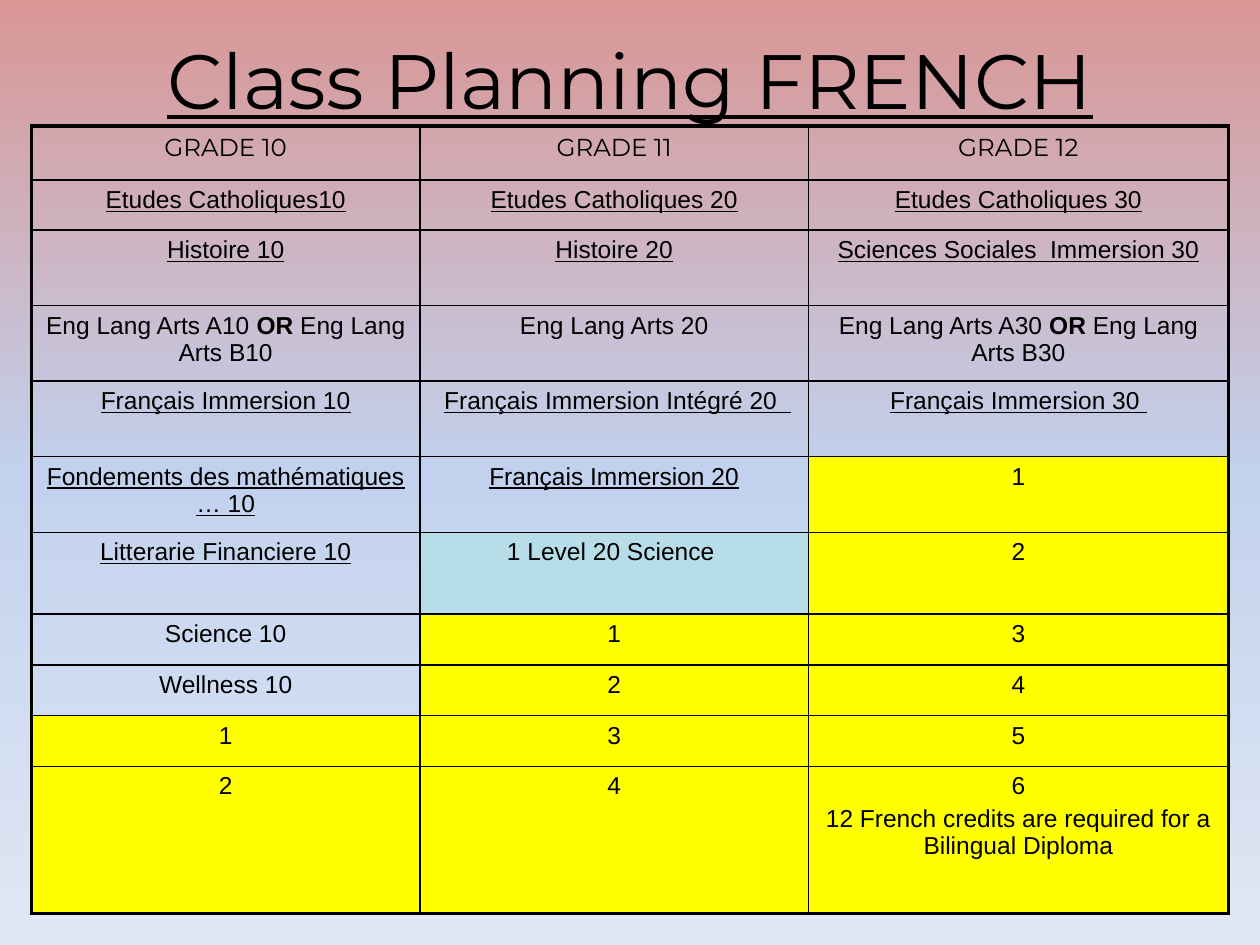
from copy import deepcopy

from lxml import etree
from pptx import Presentation
from pptx import util as u
from pptx.dml import color
from pptx.enum import text
from pptx.oxml import ns

Pt = u.Pt
BLACK, GOLD, BLUE = "000000", "FFFF00", "B7DEE8"
WIDTHS = [222, 222, 240]
HEIGHTS = [31, 28.4] + [43.2] * 4 + [46.8] + [29] * 3 + [84]
ROWS = [
    ["GRADE 10", "GRADE 11", "GRADE 12"],
    ["_Etudes Catholiques10", "_Etudes Catholiques 20", "_Etudes Catholiques 30"],
    ["_Histoire 10", "_Histoire 20", "_Sciences Sociales  Immersion 30"],
    ["Eng Lang Arts A10 *OR* Eng Lang Arts B10", "Eng Lang Arts 20",
     "Eng Lang Arts A30 *OR* Eng Lang Arts B30"],
    ["_Français Immersion 10", " _Français Immersion Intégré 20  ",
     "_Français Immersion 30 "],
    ["_Fondements des mathématiques … 10", "_Français Immersion 20", "1"],
    ["_Litterarie Financiere 10", "1 Level 20 Science ", "2"],
    ["Science 10", "1", "3"],
    ["Wellness 10", "2", "4"],
    ["1", "3", "5"],
    ["2", "4", "6\n12 French credits are required for a Bilingual Diploma"],
]


def rgb(code):
    return color.RGBColor.from_string(code)


class Deck:
    head, body = "Montserrat", "Arial"

    def __init__(self, show):
        self.slide = show.slides.add_slide(show.slide_layouts[5])

    def back(self, stops):
        fill = self.slide.background.fill
        fill.gradient()
        fill.gradient_angle = 270
        first = next(self.slide.element.iter(ns.qn("a:gs")))
        first.addnext(deepcopy(first))
        for stop, (place, code) in zip(fill.gradient_stops, stops):
            stop.color.rgb = rgb(code)
            stop.position = place

    def style(self, para, name, size):
        para.alignment = text.PP_ALIGN.CENTER
        para.font.name = name
        para.font.size = Pt(size)
        para.font.color.rgb = rgb(BLACK)

    def title(self, words, x, y, w, h):
        box = self.slide.shapes.title
        box.left, box.top, box.width, box.height = map(Pt, (x, y, w, h))
        frame = box.text_frame
        frame.text = words
        frame.vertical_anchor = text.MSO_ANCHOR.MIDDLE
        self.style(frame.paragraphs[0], self.head, 44)
        frame.paragraphs[0].font.underline = True

    def line(self, para, words, name):
        self.style(para, name, 14)
        para.space_before = Pt(0 if words.find("_") > 0 else 2.8)
        for i, part in enumerate(words.split("_")):
            for j, bit in enumerate(part.split("*")):
                if bit:
                    run = para.add_run()
                    run.text = bit
                    run.font.underline = i == 1
                    run.font.bold = j == 1

    def edge(self, cell, outer):
        props = cell._tc.get_or_add_tcPr()
        for side, thick in outer.items():
            rule = etree.SubElement(props, ns.qn("a:ln" + side),
                                    w=str(Pt(2.25 if thick else 1)))
            fill = etree.SubElement(rule, ns.qn("a:solidFill"))
            etree.SubElement(fill, ns.qn("a:srgbClr"), val=BLACK)

    def paint(self, cell, words):
        if words[0].isdigit():
            cell.fill.solid()
            cell.fill.fore_color.rgb = rgb(BLUE if "Science" in words else GOLD)
        else:
            cell.fill.background()

    def table(self, rows, x, y, widths, heights):
        frame = self.slide.shapes.add_table(
            len(rows), len(widths), Pt(x), Pt(y), Pt(sum(widths)), Pt(sum(heights)))
        grid = frame.table
        grid.first_row = grid.horz_banding = False
        for col, width in zip(grid.columns, widths):
            col.width = Pt(width)
        for r, (row, height) in enumerate(zip(rows, heights)):
            grid.rows[r].height = Pt(height)
            for c, words in enumerate(row):
                cell = grid.cell(r, c)
                self.edge(cell, {"L": c == 0, "R": c == len(widths) - 1,
                                 "T": r == 0, "B": r == len(rows) - 1})
                self.paint(cell, words)
                for n, part in enumerate(words.split("\n")):
                    body = cell.text_frame
                    para = body.add_paragraph() if n else body.paragraphs[0]
                    self.line(para, part, self.body if r else self.head)


def main():
    show = Presentation()
    show.slide_width, show.slide_height = Pt(720), Pt(540)
    deck = Deck(show)
    deck.back([(0, "D99694"), (0.5, "C2D1ED"), (1, "E1E8F5")])
    deck.title("Class Planning FRENCH", 54, 18, 612, 54)
    deck.table(ROWS, 18, 72, WIDTHS, HEIGHTS)
    show.save("out.pptx")


if __name__ == "__main__":
    main()
